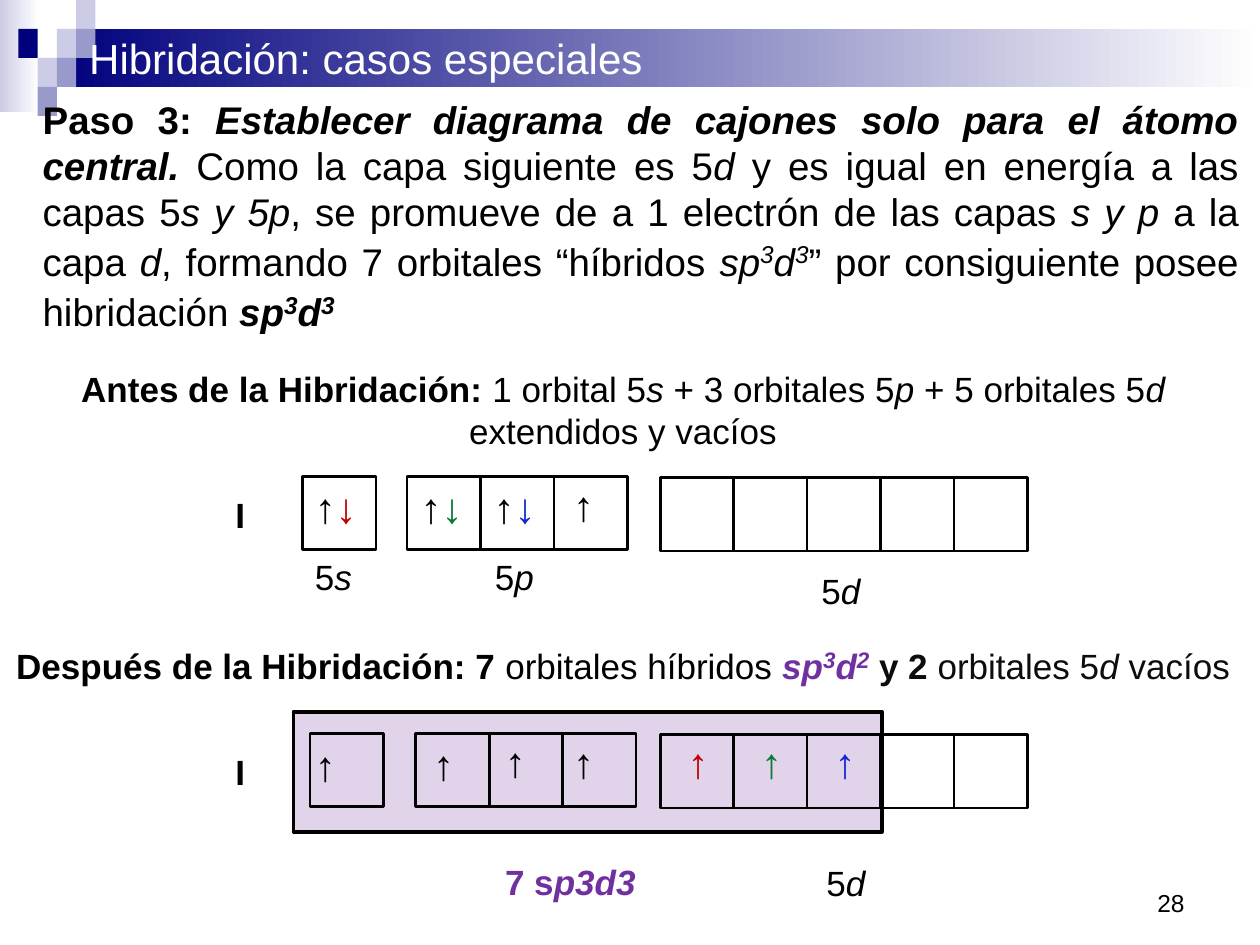
from dataclasses import dataclass

import pptx
import pptx.dml.color
import pptx.enum.shapes
import pptx.enum.text
import pptx.oxml
import pptx.oxml.ns
import pptx.util

ALIGN = pptx.enum.text.PP_ALIGN
COLUMNS, ROWS = 100, 75
CELL = 5.83


@dataclass(frozen=True)
class Theme:
    """Colours, type sizes and line widths of the slide."""
    font: str = "Arial"
    white: str = "FFFFFF"
    ink: str = "000000"
    soft_ink: str = "0D0D0D"
    navy: str = "00007D"
    mid: str = "9999CC"
    pale: str = "CCCCE6"
    purple: str = "7030A0"
    red: str = "C00000"
    green: str = "087833"
    blue: str = "1027D2"
    large: int = 24
    body: int = 22
    label: int = 20
    number: int = 14
    cell_line: float = 1.5
    panel_line: float = 2.25


THEME = Theme()


def rgb(code):
    """Turn a hex code into a colour."""
    return pptx.dml.color.RGBColor.from_string(code)


def place(left, top, width, height):
    """Convert grid columns and rows to slide lengths."""
    column = pptx.util.Inches(10) / COLUMNS
    row = pptx.util.Inches(7.5) / ROWS
    return [round(n) for n in (left * column, top * row, width * column, height * row)]


def add_block(slide, area, fill=None, line=None, fade=False, alpha=None):
    """Draw a rectangle with a plain, fading, translucent or empty fill."""
    block = slide.shapes.add_shape(pptx.enum.shapes.MSO_SHAPE.RECTANGLE, *place(*area))
    block.shadow.inherit = False
    if fade:
        block.fill.gradient()
        block.fill.gradient_angle = 0
        for stop, code in zip(block.fill.gradient_stops, (fill, THEME.white)):
            stop.color.rgb = rgb(code)
    elif fill:
        block.fill.solid()
        block.fill.fore_color.rgb = rgb(fill)
    else:
        block.fill.background()
    if alpha:
        colour = block.fill._xPr.find(".//" + pptx.oxml.ns.qn("a:srgbClr"))
        opacity = pptx.oxml.parse_xml(f'<a:alpha {pptx.oxml.ns.nsdecls("a")} val="{alpha * 1000}"/>')
        colour.append(opacity)
    if line:
        block.line.color.rgb = rgb(THEME.ink)
        block.line.width = pptx.util.Pt(line)
    else:
        block.line.fill.background()


def add_text(slide, area, runs, size, align=ALIGN.LEFT, wrap=False):
    """Add a paragraph of (text, marks, colour) runs: b bold, i italic, ^ raised."""
    box = slide.shapes.add_textbox(*place(*area))
    frame = box.text_frame
    frame.word_wrap = wrap
    frame.auto_size = pptx.enum.text.MSO_AUTO_SIZE.SHAPE_TO_FIT_TEXT
    paragraph = frame.paragraphs[0]
    paragraph.alignment = align
    for text, marks, *colour in runs:
        run = paragraph.add_run()
        run.text = text
        font = run.font
        font.name = THEME.font
        font.bold = "b" in marks
        font.italic = "i" in marks
        font.color.rgb = rgb(colour[0] if colour else THEME.ink)
        font.size = pptx.util.Pt(size)
        if "^" in marks:
            font.size = pptx.util.Pt(size + 2)
            font._element.set("baseline", "30000")


def add_orbitals(slide, left, top, count):
    """Draw a row of adjoining orbital boxes."""
    for index in range(count):
        add_block(slide, (left + index * CELL, top, CELL, CELL), line=THEME.cell_line)


def add_electrons(slide, left, top, up=THEME.ink, down=None):
    """Add an electron arrow, or a pair when a second colour is given."""
    arrows = [("↑", "b", up)] + ([("↓", "b", down)] if down else [])
    add_text(slide, (left, top, 5.3 if down else 3.7, 5), arrows, THEME.large)


def add_subshell(slide, left, top, letter):
    """Name a subshell of the fifth level."""
    add_text(slide, (left, top, 5.1, 4.4), [("5", ""), (letter, "i")], THEME.label)


def add_element(slide, top):
    """Write the symbol of the central atom."""
    add_text(slide, (17.7, top, 2.8, 4.4), [("I", "b")], THEME.label)


def add_header(slide):
    """Draw the banner, its tiles and the title."""
    add_block(slide, (0, 0, 3.1, 8.9), THEME.pale, fade=True)
    add_block(slide, (4.5, 2.3, 95.5, 4.6), THEME.navy, fade=True)
    tiles = [(2, 1, THEME.pale), (3, 0, THEME.pale), (3, 1, THEME.mid), (1, 2, THEME.pale),
             (0, 1, THEME.navy), (2, 2, THEME.mid), (1, 3, THEME.mid)]
    for column, row, colour in tiles:
        add_block(slide, (1.45 + column * 1.53, row * 2.3, 1.53, 2.3), colour)
    add_text(slide, (6.1, 2.1, 53.3, 5),
             [("Hibridación: casos especiales", "", THEME.white)], THEME.large)


def add_explanation(slide):
    """Write the paragraph that explains the step."""
    add_text(slide, (2.4, 7.1, 96.9, 20.2), [
        ("Paso 3: ", "b"),
        ("Establecer diagrama de cajones solo para el átomo central. ", "bi"),
        ("Como la capa siguiente es 5", ""), ("d ", "i"),
        ("y es igual en energía a las capas 5", ""), ("s y 5p", "i"),
        (", se promueve de a 1 electrón de las capas ", ""), ("s y p", "i"),
        (" a la capa ", ""), ("d", "i"), (", formando 7 orbitales “híbridos ", ""),
        ("sp", "i"), ("3", "i^"), ("d", "i"), ("3", "i^"),
        ("” por consiguiente posee hibridación ", ""),
        ("sp", "bi"), ("3", "bi^"), ("d", "bi"), ("3", "bi^"),
    ], THEME.body, ALIGN.JUSTIFY, wrap=True)


def add_before(slide):
    """Draw the orbitals before hybridisation."""
    add_text(slide, (2.4, 28.7, 94.1, 7.7), [
        ("Antes de la Hibridación: ", "b"), ("1 orbital 5", ""), ("s ", "i"),
        ("+ 3 orbitales 5", ""), ("p", "i"), (" + 5 orbitales 5", ""), ("d ", "i"),
        ("extendidos y vacíos", ""),
    ], THEME.label, ALIGN.CENTER, wrap=True)
    add_element(slide, 38.7)
    for left, top, count in [(24, 37.8, 1), (32.3, 37.8, 3), (52.4, 37.9, 5)]:
        add_orbitals(slide, left, top, count)
    for left, top, letter in [(24, 43.6, "s"), (38.3, 43.6, "p"), (64.2, 44.7, "d")]:
        add_subshell(slide, left, top, letter)
    for left, colour in [(24, THEME.red), (32.4, THEME.green), (38.2, THEME.blue)]:
        add_electrons(slide, left, 37.7, down=colour)
    add_electrons(slide, 44.5, 37.6)


def add_after(slide):
    """Draw the orbitals after hybridisation."""
    add_text(slide, (0, 50.4, 98.9, 4.4), [
        ("Después de la Hibridación: 7", "b"), (" orbitales híbridos ", ""),
        ("sp", "bi", THEME.purple), ("3", "bi^", THEME.purple),
        ("d", "bi", THEME.purple), ("2", "bi^", THEME.purple),
        (" ", "bi", THEME.purple), ("y 2", "b", THEME.soft_ink),
        (" orbitales 5", "", THEME.soft_ink), ("d", "i", THEME.soft_ink),
        (" vacíos", "", THEME.soft_ink),
    ], THEME.label, ALIGN.CENTER, wrap=True)
    add_block(slide, (23.3, 56.5, 46.7, 9.5), THEME.purple, THEME.panel_line, alpha=21)
    add_element(slide, 59.1)
    for left, top, count in [(24.6, 58.2, 1), (33, 58.2, 3), (52.4, 58.3, 5)]:
        add_orbitals(slide, left, top, count)
    for left, top in [(24, 58.2), (33.4, 58.1), (39.1, 57.9), (44.5, 58)]:
        add_electrons(slide, left, top)
    for index, colour in enumerate((THEME.red, THEME.green, THEME.blue)):
        add_electrons(slide, 53.6 + index * CELL, 58, colour)
    add_text(slide, (39.1, 67.8, 12.5, 4.4),
             [("7 s", "b", THEME.purple), ("p3d3", "bi", THEME.purple)], THEME.label)
    add_subshell(slide, 64.6, 67.9, "d")


def main():
    """Build and save the slide."""
    deck = pptx.Presentation()
    deck.slide_width = pptx.util.Inches(10)
    deck.slide_height = pptx.util.Inches(7.5)
    slide = deck.slides.add_slide(deck.slide_layouts[6])
    add_header(slide)
    add_text(slide, (71.7, 70, 23.3, 3.5), [("28", "")], THEME.number, ALIGN.RIGHT, wrap=True)
    add_explanation(slide)
    add_before(slide)
    add_after(slide)
    deck.save("out.pptx")


if __name__ == "__main__":
    main()
